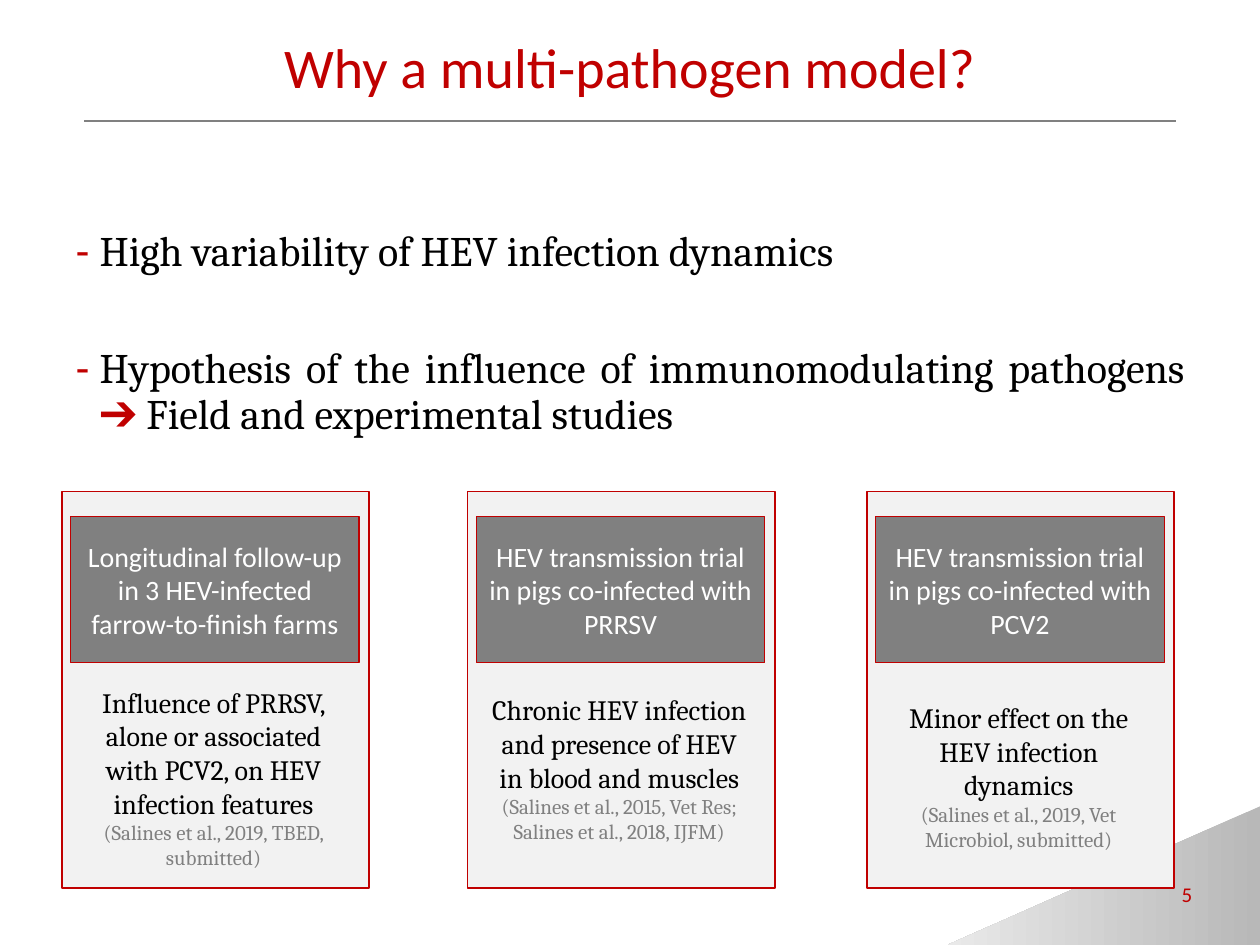
from dataclasses import dataclass

from lxml.etree import SubElement
from pptx import Presentation
from pptx.dml.color import RGBColor as Rgb
from pptx.enum.shapes import MSO_CONNECTOR as Connector, MSO_SHAPE as Preset
from pptx.enum.text import MSO_ANCHOR as Anchor, MSO_AUTO_SIZE as AutoSize, PP_ALIGN as Align
from pptx.oxml.ns import qn
from pptx.util import Inches, Pt


@dataclass(frozen=True)
class Theme:
    red: str = "C00000"
    grey: str = "808080"
    panel: str = "F2F2F2"
    white: str = "FFFFFF"
    black: str = "000000"
    corner_dark: str = "B8B8B8"
    corner_light: str = "E9E9E9"
    sans: str = "Calibri"
    serif: str = "Cambria"
    title: int = 32
    body: int = 24
    card: int = 16
    small: int = 12


@dataclass(frozen=True)
class Box:
    left: float
    top: float
    width: float
    height: float

    def lengths(self) -> list:
        return [Inches(n) for n in (self.left, self.top, self.width, self.height)]


@dataclass(frozen=True)
class Span:
    text: str
    size: int
    color: str
    font: str
    bold: bool = False


@dataclass(frozen=True)
class Study:
    left: float
    finding_top: float
    finding_height: float
    design: str
    finding: str
    citation: str


THEME = Theme()
FRAME_FORMAT = {"word_wrap": True, "auto_size": AutoSize.NONE}

STUDIES = [
    Study(0.49, 5.39, 1.58,
          "Longitudinal follow-up in 3 HEV-infected farrow-to-finish farms",
          "Influence of PRRSV, alone or associated with PCV2, on HEV infection features",
          "(Salines et al., 2019, TBED, submitted)"),
    Study(3.71, 5.45, 1.31,
          "HEV transmission trial in pigs co-infected with PRRSV",
          "Chronic HEV infection and presence of HEV in blood and muscles",
          "(Salines et al., 2015, Vet Res; Salines et al., 2018, IJFM)"),
    Study(6.88, 5.51, 1.31,
          "HEV transmission trial in pigs co-infected with PCV2",
          "Minor effect on the HEV infection dynamics",
          "(Salines et al., 2019, Vet Microbiol, submitted)"),
]


def apply(target, values: dict) -> None:
    for name, value in values.items():
        setattr(target, name, value)


def add_spans(paragraph, spans: list[Span]) -> None:
    for span in spans:
        run = paragraph.add_run()
        run.text = span.text
        apply(run.font, {"size": Pt(span.size), "name": span.font, "bold": span.bold})
        run.font.color.rgb = Rgb.from_string(span.color)


def write(shape, paragraphs: list[list[Span]], align=Align.CENTER, anchor=Anchor.TOP) -> None:
    frame = shape.text_frame
    apply(frame, FRAME_FORMAT | {"vertical_anchor": anchor})
    for index, spans in enumerate(paragraphs):
        paragraph = frame.add_paragraph() if index else frame.paragraphs[0]
        paragraph.alignment = align
        add_spans(paragraph, spans)


def place(shape, box: Box) -> None:
    apply(shape, dict(zip(("left", "top", "width", "height"), box.lengths())))


def add_panel(slide, box: Box, fill: str, line_width: float):
    panel = slide.shapes.add_shape(Preset.RECTANGLE, *box.lengths())
    panel.shadow.inherit = False
    panel.fill.solid()
    panel.fill.fore_color.rgb = Rgb.from_string(fill)
    panel.line.color.rgb = Rgb.from_string(THEME.red)
    panel.line.width = Pt(line_width)
    return panel


def add_study(slide, study: Study) -> None:
    add_panel(slide, Box(study.left, 3.9, 2.44, 3.15), THEME.panel, 1)
    heading = add_panel(slide, Box(study.left + 0.07, 4.1, 2.29, 1.16), THEME.grey, 0.75)
    write(heading, [[Span(study.design, THEME.card, THEME.white, THEME.sans)]],
          anchor=Anchor.MIDDLE)
    finding_box = Box(study.left + 0.06, study.finding_top, 2.29, study.finding_height)
    finding = slide.shapes.add_textbox(*finding_box.lengths())
    write(finding, [[Span(study.finding, THEME.card, THEME.black, THEME.serif)],
                    [Span(study.citation, THEME.small, THEME.grey, THEME.serif)]])


def add_corner(slide) -> None:
    corner = slide.shapes.add_shape(Preset.ISOSCELES_TRIANGLE, *Box(7.52, 6.4, 2.48, 1.1).lengths())
    corner.adjustments[0] = 1
    corner.shadow.inherit = False
    corner.line.fill.background()
    corner.fill.gradient()
    corner.fill.gradient_angle = 180
    stops = zip(corner.fill.gradient_stops, (THEME.corner_dark, THEME.corner_light), (0, 1))
    for stop, color, position in stops:
        stop.color.rgb = Rgb.from_string(color)
        stop.position = position


def add_rule(slide) -> None:
    rule = slide.shapes.add_connector(
        Connector.STRAIGHT, Inches(0.67), Inches(0.96), Inches(9.33), Inches(0.96))
    rule.line.color.rgb = Rgb.from_string(THEME.grey)
    rule.line.width = Pt(0.75)
    SubElement(rule.element.spPr, qn("a:effectLst"))


def add_dash(paragraph) -> None:
    properties = paragraph._p.get_or_add_pPr()
    properties.set("marL", str(Inches(0.19)))
    properties.set("indent", str(Inches(-0.19)))
    color = SubElement(properties, qn("a:buClr"))
    SubElement(color, qn("a:srgbClr"), val=THEME.red)
    SubElement(properties, qn("a:buChar"), char="-")


def fill_reasons(body) -> None:
    place(body, Box(0.5, 1.78, 9, 4.92))
    text = (THEME.body, THEME.black, THEME.serif)
    write(body, [
        [Span("High variability of HEV infection dynamics", *text)],
        [Span("Hypothesis of the influence of immunomodulating pathogens ", *text),
         Span("➔", THEME.body, THEME.red, THEME.serif, True),
         Span(" Field and experimental studies", *text)],
    ], align=Align.JUSTIFY)
    for paragraph, gap in zip(body.text_frame.paragraphs, (0, 41)):
        add_dash(paragraph)
        apply(paragraph, {"line_spacing": 0.9, "space_before": Pt(gap)})


def main() -> None:
    deck = Presentation()
    apply(deck, {"slide_width": Inches(10), "slide_height": Inches(7.5)})
    slide = deck.slides.add_slide(deck.slide_layouts[1])
    title, body = slide.placeholders

    add_corner(slide)
    place(title, Box(0, 0.21, 10, 0.64))
    write(title, [[Span("Why a multi-pathogen model?", THEME.title, THEME.red, THEME.sans)]])
    fill_reasons(body)
    add_rule(slide)
    for study in STUDIES:
        add_study(slide, study)

    page_number = slide.shapes.add_textbox(*Box(9.28, 6.9, 0.48, 0.4).lengths())
    write(page_number, [[Span("5", THEME.small, THEME.red, THEME.sans)]],
          align=Align.LEFT, anchor=Anchor.MIDDLE)
    deck.save("out.pptx")


if __name__ == "__main__":
    main()
